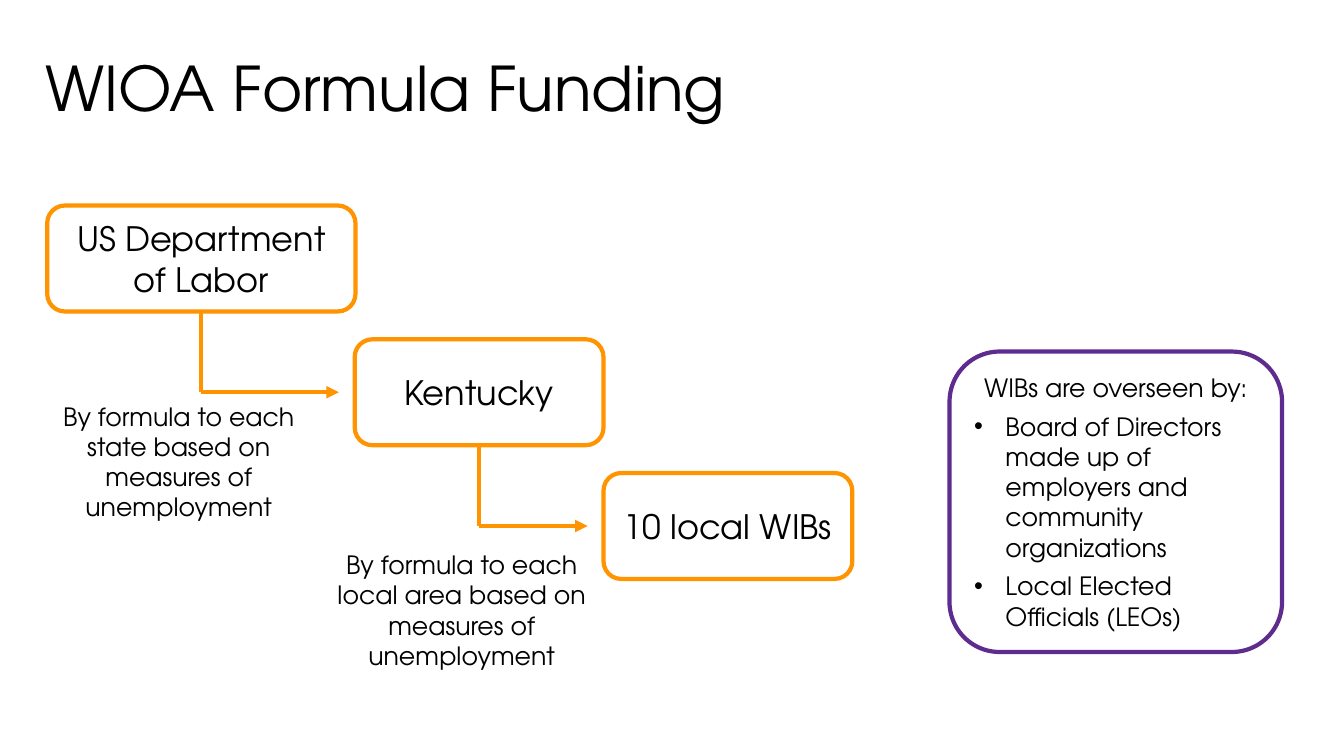
from dataclasses import dataclass

import pptx
import pptx.dml.color
import pptx.enum.shapes
import pptx.enum.text
import pptx.oxml.ns
import pptx.util
from lxml import etree

Cm = pptx.util.Cm
Pt = pptx.util.Pt
ALIGN = pptx.enum.text.PP_ALIGN
ANCHOR = pptx.enum.text.MSO_ANCHOR


@dataclass(frozen=True)
class Theme:
    font: str = "TeX Gyre Adventor"
    text: str = "000000"
    flow: str = "FF9300"
    oversight: str = "5E2B8F"
    title_size: int = 44
    box_size: int = 24
    note_size: int = 18
    line_width: int = 3


THEME = Theme()
BOX_HEIGHT = 2.67
ARROW_GAP = 0.4

# name, left, top, width in cm
STAGES = [
    ("US Department of Labor", 1.19, 5.18, 7.77),
    ("Kentucky", 8.94, 8.55, 6.27),
    ("10 local WIBs", 15.21, 11.92, 6.27),
]
# text, left, top, width in cm
FORMULA_NOTES = [
    ("By formula to each state based on measures of unemployment", 1.24, 9.98, 6.53),
    ("By formula to each local area based on measures of unemployment", 7.8, 13.72, 7.67),
]
OVERSEERS = [
    "Board of Directors made up of employers and community organizations",
    "Local Elected Officials (LEOs)",
]


def rgb(value):
    return pptx.dml.color.RGBColor.from_string(value)


def add_text(paragraph, text, size, alignment):
    paragraph.alignment = alignment
    run = paragraph.add_run()
    run.text = text
    run.font.name = THEME.font
    run.font.size = Pt(size)
    run.font.color.rgb = rgb(THEME.text)


def add_bullet(paragraph):
    properties = paragraph._p.get_or_add_pPr()
    properties.set("marL", str(Cm(0.79)))
    properties.set("indent", str(-Cm(0.79)))
    font = etree.SubElement(properties, pptx.oxml.ns.qn("a:buFont"))
    font.set("typeface", "Arial")
    bullet = etree.SubElement(properties, pptx.oxml.ns.qn("a:buChar"))
    bullet.set("char", "•")


def format_title(slide, text):
    title = slide.shapes.title
    title.left, title.top, title.width, title.height = Cm(0.89), Cm(0.23), Cm(32.11), Cm(4.17)
    title.text_frame.vertical_anchor = ANCHOR.MIDDLE
    paragraph = title.text_frame.paragraphs[0]
    paragraph.line_spacing = 0.9
    add_text(paragraph, text, THEME.title_size, ALIGN.LEFT)


def add_outlined_box(slide, left, top, width, height, color):
    shape = slide.shapes.add_shape(
        pptx.enum.shapes.MSO_SHAPE.ROUNDED_RECTANGLE, Cm(left), Cm(top), Cm(width), Cm(height)
    )
    shape.shadow.inherit = False
    shape.fill.background()
    shape.line.color.rgb = rgb(color)
    shape.line.width = Pt(THEME.line_width)
    shape.text_frame.word_wrap = True
    shape.text_frame.vertical_anchor = ANCHOR.MIDDLE
    return shape


def add_stage(slide, name, left, top, width):
    shape = add_outlined_box(slide, left, top, width, BOX_HEIGHT, THEME.flow)
    add_text(shape.text_frame.paragraphs[0], name, THEME.box_size, ALIGN.CENTER)
    return shape


def add_line(slide, start_x, start_y, end_x, end_y, arrow=False):
    connector = slide.shapes.add_connector(
        pptx.enum.shapes.MSO_CONNECTOR.STRAIGHT, start_x, start_y, end_x, end_y
    )
    connector.line.color.rgb = rgb(THEME.flow)
    connector.line.width = Pt(THEME.line_width)
    if arrow:
        head = etree.SubElement(connector.line._get_or_add_ln(), pptx.oxml.ns.qn("a:tailEnd"))
        head.set("type", "triangle")
    etree.SubElement(connector._element.spPr, pptx.oxml.ns.qn("a:effectLst"))
    return connector


def link_stages(slide, source, target):
    """Drop from the source's bottom, then point right at the target's middle."""
    x = source.left + source.width // 2
    y = target.top + target.height // 2
    drop = add_line(slide, x, source.top + source.height, x, y)
    drop.begin_connect(source, 2)
    add_line(slide, x, y, target.left - Cm(ARROW_GAP), y, arrow=True)


def add_formula_note(slide, text, left, top, width):
    box = slide.shapes.add_textbox(Cm(left), Cm(top), Cm(width), Cm(3.33))
    box.text_frame.word_wrap = True
    box.text_frame.auto_size = pptx.enum.text.MSO_AUTO_SIZE.SHAPE_TO_FIT_TEXT
    add_text(box.text_frame.paragraphs[0], text, THEME.note_size, ALIGN.CENTER)


def add_oversight_box(slide, heading, overseers):
    frame = add_outlined_box(slide, 23.93, 8.86, 8.38, 7.57, THEME.oversight).text_frame
    paragraph = frame.paragraphs[0]
    add_text(paragraph, heading, THEME.note_size, ALIGN.CENTER)
    for overseer in overseers:
        paragraph.space_after = Pt(6)
        paragraph = frame.add_paragraph()
        add_bullet(paragraph)
        add_text(paragraph, overseer, THEME.note_size, ALIGN.LEFT)


def main():
    presentation = pptx.Presentation()
    presentation.slide_width = Cm(33.87)
    presentation.slide_height = Cm(19.05)
    slide = presentation.slides.add_slide(presentation.slide_layouts.get_by_name("Title Only"))

    format_title(slide, "WIOA Formula Funding")
    stages = [add_stage(slide, *stage) for stage in STAGES]
    for source, target in zip(stages, stages[1:]):
        link_stages(slide, source, target)
    for note in FORMULA_NOTES:
        add_formula_note(slide, *note)
    add_oversight_box(slide, "WIBs are overseen by:", OVERSEERS)

    presentation.save("out.pptx")


if __name__ == "__main__":
    main()
